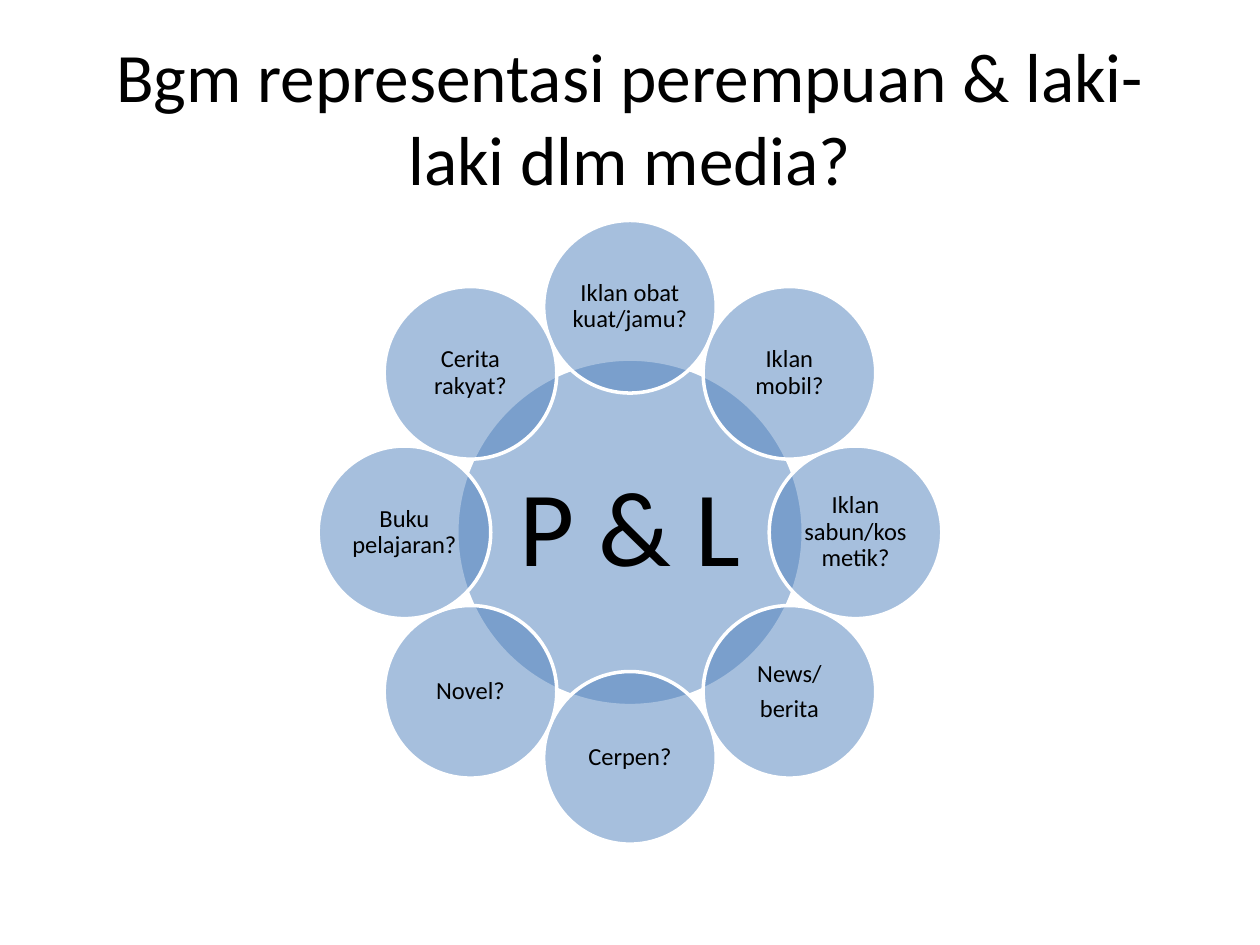
from math import cos, pi, sin

from pptx import Presentation
from pptx.dml.color import RGBColor
from pptx.enum.shapes import MSO_SHAPE
from pptx.enum.text import MSO_ANCHOR, PP_ALIGN
from pptx.oxml.ns import qn
from pptx.util import Inches, Pt
from lxml.etree import SubElement

BLUE = RGBColor(0x4F, 0x81, 0xBD)
WHITE = RGBColor(0xFF, 0xFF, 0xFF)
BLACK = RGBColor(0x00, 0x00, 0x00)

CENTER_COL, CENTER_ROW = 50, 42.25
RING_RADIUS = 17.9
HUB_SIZE, PETAL_SIZE = 27.5, 13.7
PETALS = [
    "Iklan obat kuat/jamu?",
    "Iklan mobil?",
    "Iklan sabun/kosmetik?",
    "News/\nberita",
    "Cerpen?",
    "Novel?",
    "Buku pelajaran?",
    "Cerita rakyat?",
]


class Deck:
    """Draws styled elements on a slide grid of 100 columns by 75 rows."""

    font = "Calibri"

    def __init__(self):
        self.prs = Presentation()
        self.prs.slide_width, self.prs.slide_height = Inches(10), Inches(7.5)
        self.s = self.prs.slides.add_slide(self.prs.slide_layouts[6])

    def box(self, col, row, cols, rows):
        w, h = self.prs.slide_width, self.prs.slide_height
        return (int(w * col / 100), int(h * row / 75),
                int(w * cols / 100), int(h * rows / 75))

    def set_text(self, sp, text, size, spacing=None, after=0):
        tf = sp.text_frame
        tf.word_wrap = True
        tf.vertical_anchor = MSO_ANCHOR.MIDDLE
        tf.text = text
        for p in tf.paragraphs:
            p.alignment = PP_ALIGN.CENTER
            p.line_spacing = spacing
            p.space_after = Pt(after)
            p.font.name = self.font
            p.font.size = Pt(size)
            p.font.color.rgb = BLACK
        return tf

    def title(self, col, row, cols, rows, text):
        sp = self.s.shapes.add_textbox(*self.box(col, row, cols, rows))
        self.set_text(sp, text, 39.6)

    def circle(self, col, row, size, text, font_size, inset):
        place = self.box(col - size / 2, row - size / 2, size, size)
        sp = self.s.shapes.add_shape(MSO_SHAPE.OVAL, *place)
        sp.shadow.inherit = False
        sp.fill.solid()
        sp.fill.fore_color.rgb = BLUE
        color = sp._element.spPr.find(qn("a:solidFill")).find(qn("a:srgbClr"))
        SubElement(color, qn("a:alpha")).set("val", "50000")
        sp.line.color.rgb = WHITE
        sp.line.width = Pt(2)
        tf = self.set_text(sp, text, font_size, 0.9, round(font_size * 0.35))
        tf.margin_left = tf.margin_right = Inches(inset)
        tf.margin_top = tf.margin_bottom = Inches(inset)


def main():
    deck = Deck()
    deck.title(5, 3, 90, 12.5,
               "Bgm representasi perempuan & laki-laki dlm media?")
    deck.circle(CENTER_COL, CENTER_ROW, HUB_SIZE, "P & L", 61, 0.08)
    for i, text in enumerate(PETALS):
        angle = 2 * pi * i / len(PETALS)
        deck.circle(CENTER_COL + RING_RADIUS * sin(angle),
                    CENTER_ROW - RING_RADIUS * cos(angle),
                    PETAL_SIZE, text, 14, 0.02)
    deck.prs.save("out.pptx")


if __name__ == "__main__":
    main()
